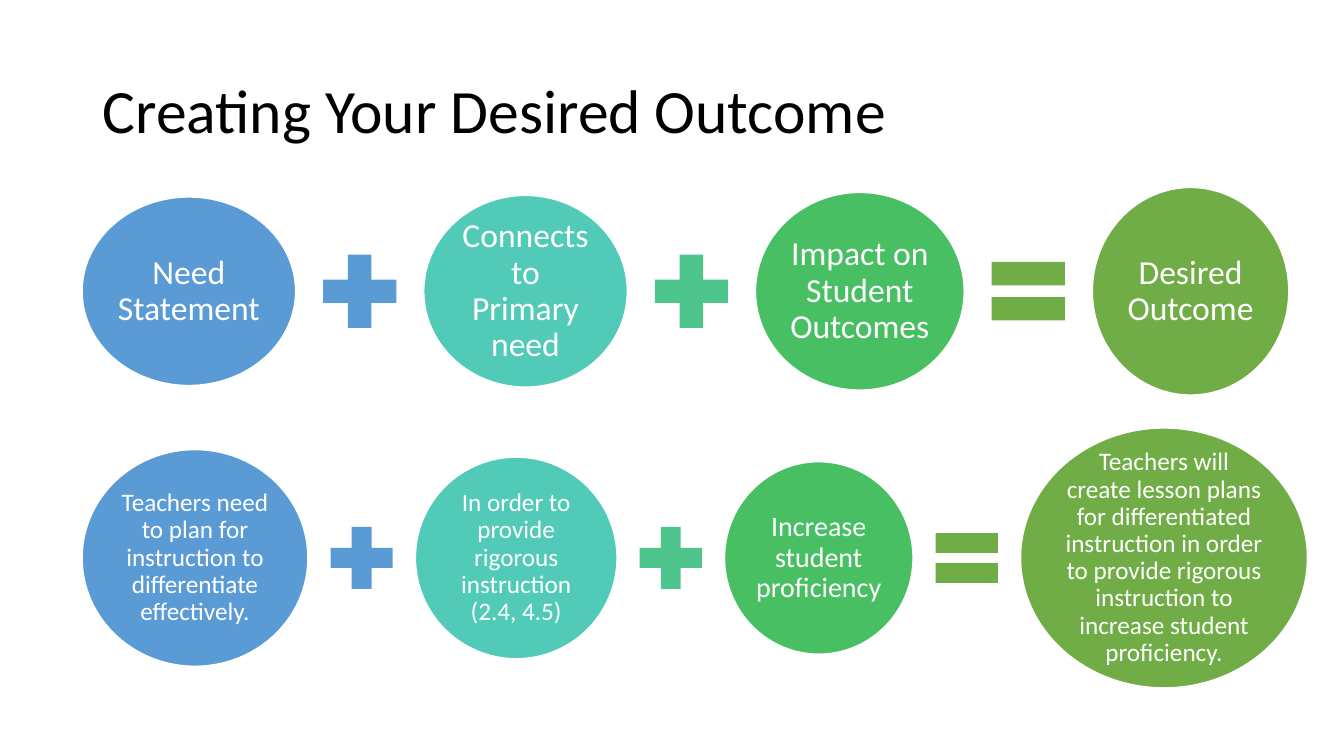
from pptx import Presentation
from pptx.dml.color import RGBColor
from pptx.enum.shapes import MSO_SHAPE
from pptx.enum.text import MSO_ANCHOR, PP_ALIGN
from pptx.util import Cm, Pt

COLORS = {
    "blue": "5B9BD5",
    "teal": "52CAB8",
    "mint": "4DC58D",
    "green": "49BF64",
    "olive": "70AD47",
    "white": "FFFFFF",
    "black": "000000",
}
CIRCLE_COLORS = ["blue", "teal", "green", "olive"]
SIGNS = [
    (MSO_SHAPE.MATH_PLUS, "blue"),
    (MSO_SHAPE.MATH_PLUS, "mint"),
    (MSO_SHAPE.MATH_EQUAL, "olive"),
]
LEFT = 2.07

# Lengths in cm; each circle is (text, width, height, font size)
EQUATIONS = [
    {
        "middle": 7.34, "sign": 2.51, "gap": 0.36,
        "circles": [
            ("Need Statement", 5.38, 4.75, 24),
            ("Connects to Primary need", 5.13, 4.83, 24),
            ("Impact on Student Outcomes", 5.26, 4.98, 24),
            ("Desired Outcome", 4.95, 5.23, 24),
        ],
    },
    {
        "middle": 14.06, "sign": 2.13, "gap": 0.29,
        "circles": [
            ("Teachers need to plan for instruction to differentiate effectively.",
             5.69, 5.46, 18),
            ("In order to provide rigorous instruction (2.4, 4.5)", 5.08, 5.08, 18),
            ("Increase student proficiency", 4.75, 4.85, 20),
            ("Teachers will create lesson plans for differentiated instruction in order "
             "to provide rigorous instruction to increase student proficiency.",
             7.23, 6.55, 18),
        ],
    },
]


def format_text(frame, size, color, alignment):
    frame.word_wrap = True
    frame.vertical_anchor = MSO_ANCHOR.MIDDLE
    para = frame.paragraphs[0]
    para.alignment = alignment
    para.line_spacing = 0.9
    for span in para.runs:
        span.font.name = "Calibri"
        span.font.size = Pt(size)
        span.font.color.rgb = RGBColor.from_string(COLORS[color])


def add_filled(shapes, kind, left, middle, width, height, color):
    """Add a shape without outline, centred vertically on middle (cm)."""
    shape = shapes.add_shape(
        kind, Cm(left), Cm(middle - height / 2), Cm(width), Cm(height))
    shape.shadow.inherit = False
    shape.fill.solid()
    shape.fill.fore_color.rgb = RGBColor.from_string(COLORS[color])
    shape.line.fill.background()
    return shape


deck = Presentation()
deck.slide_width = Cm(33.87)
deck.slide_height = Cm(19.05)
page = deck.slides.add_slide(deck.slide_layouts[5])

title = page.shapes.title
title.left, title.top, title.width, title.height = Cm(2.33), Cm(1.01), Cm(29.21), Cm(3.68)
title.text_frame.text = "Creating Your Desired Outcome"
format_text(title.text_frame, 44, "black", PP_ALIGN.LEFT)

for equation in EQUATIONS:
    group = page.shapes.add_group_shape()
    middle, sign_size, gap = equation["middle"], equation["sign"], equation["gap"]
    left = LEFT
    for index, (text, width, height, size) in enumerate(equation["circles"]):
        circle = add_filled(group.shapes, MSO_SHAPE.OVAL, left, middle,
                            width, height, CIRCLE_COLORS[index])
        circle.line.color.rgb = RGBColor.from_string(COLORS["white"])
        circle.line.width = Pt(1)
        frame = circle.text_frame
        frame.margin_left = frame.margin_right = Cm(0.04)
        frame.margin_top = frame.margin_bottom = Cm(0.08)
        frame.text = text
        format_text(frame, size, "white", PP_ALIGN.CENTER)
        left += width + gap
        if index < len(SIGNS):
            kind, color = SIGNS[index]
            add_filled(group.shapes, kind, left, middle, sign_size, sign_size, color)
            left += sign_size + gap

deck.save("out.pptx")
